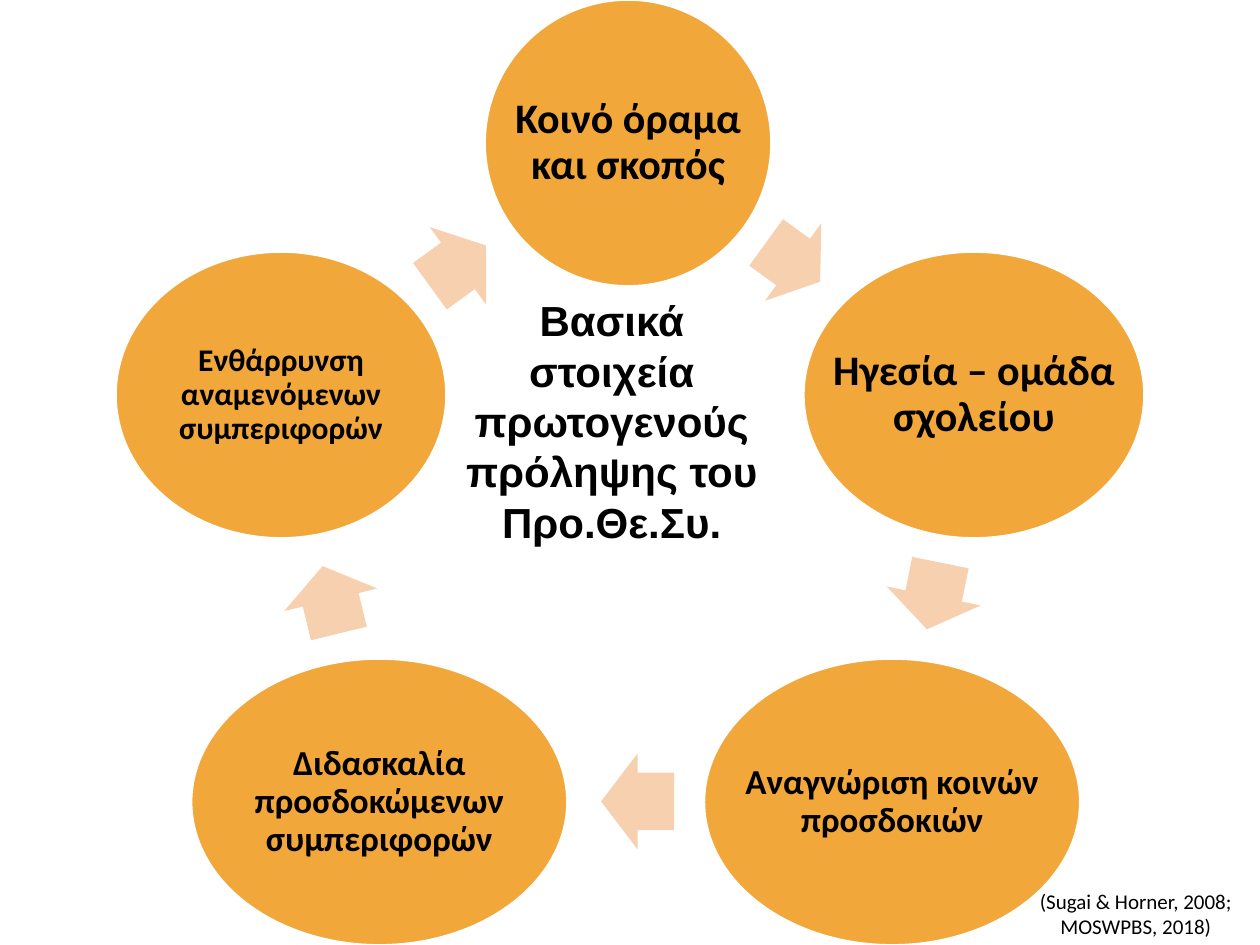
import pptx
import pptx.util
from pptx.dml.color import RGBColor
from pptx.enum.shapes import MSO_SHAPE
from pptx.enum.text import MSO_ANCHOR, PP_ALIGN
from pptx.util import Inches

ORANGE = RGBColor(0xF1, 0xA7, 0x3A)
PEACH = RGBColor(0xF7, 0xD0, 0xAF)
WHITE = RGBColor(0xFF, 0xFF, 0xFF)
BLACK = RGBColor(0, 0, 0)

STEP_HEIGHT = 2.27
ARROW_HEIGHT = 0.76
STEP_INSET = 0.03

# Clockwise from the top: wording, left, top, width, text size
STEPS = [
    ("Κοινό όραμα και σκοπός", 3.85, 0, 2.27, 24),
    ("Ηγεσία – ομάδα σχολείου", 6.38, 2, 2.7, 24),
    ("Αναγνώριση κοινών προσδοκιών", 5.59, 5.23, 2.98, 20),
    ("Διδασκαλία προσδοκώμενων συμπεριφορών", 1.52, 5.23, 2.98, 20),
    ("Ενθάρρυνση αναμενόμενων συμπεριφορών", 0.92, 2, 2.62, 18),
]

# The arrow after each step: left, top, width, rotation
ARROWS = [
    (6.03, 1.7, 0.53, 36),
    (7.14, 4.35, 0.54, 101.4),
    (4.77, 5.98, 0.58, 180),
    (2.35, 4.38, 0.55, 256.4),
    (3.36, 1.73, 0.55, 324),
]


def add_text(slide, wording, left, top, width, height, size, font_name, bold=False):
    label = slide.shapes.add_textbox(
        Inches(left), Inches(top), Inches(width), Inches(height))
    frame = label.text_frame
    frame.word_wrap = True
    frame.text = wording
    paragraph = frame.paragraphs[0]
    paragraph.alignment = PP_ALIGN.CENTER
    font = paragraph.runs[0].font
    font.name = font_name
    font.size = pptx.util.Pt(size)
    font.bold = bold
    font.color.rgb = BLACK
    return frame


def add_filled_shape(slide, preset, left, top, width, height, color):
    shape = slide.shapes.add_shape(
        preset, Inches(left), Inches(top), Inches(width), Inches(height))
    shape.shadow.inherit = False
    shape.fill.solid()
    shape.fill.fore_color.rgb = color
    return shape


def add_step(slide, wording, left, top, width, size):
    """Add an ellipse and a label as wide as it, beyond its own text area."""
    ellipse = add_filled_shape(
        slide, MSO_SHAPE.OVAL, left, top, width, STEP_HEIGHT, ORANGE)
    ellipse.line.color.rgb = WHITE
    ellipse.line.width = pptx.util.Pt(1)

    frame = add_text(slide, wording, left, top, width, STEP_HEIGHT, size, "Calibri", True)
    frame.vertical_anchor = MSO_ANCHOR.MIDDLE
    frame.margin_left = frame.margin_right = Inches(STEP_INSET)
    frame.margin_top = frame.margin_bottom = Inches(STEP_INSET)
    frame.paragraphs[0].line_spacing = 0.9


def add_arrow(slide, left, top, width, rotation):
    arrow = add_filled_shape(
        slide, MSO_SHAPE.RIGHT_ARROW, left, top, width, ARROW_HEIGHT, PEACH)
    arrow.line.fill.background()
    arrow.adjustments[0] = 0.6
    arrow.adjustments[1] = 0.5
    arrow.rotation = rotation


def main():
    presentation = pptx.Presentation()
    presentation.slide_width = Inches(10)
    presentation.slide_height = Inches(7.5)
    slide = presentation.slides.add_slide(presentation.slide_layouts[6])

    add_text(slide, "(Sugai & Horner, 2008; MOSWPBS, 2018)",
             8.03, 7, 1.97, 0.5, 12, "Calibri")
    add_text(slide, "Βασικά στοιχεία πρωτογενούς πρόληψης του Προ.Θε.Συ.",
             3.52, 2.29, 2.67, 2.12, 24, "Arial", True)
    for step, arrow in zip(STEPS, ARROWS):
        add_step(slide, *step)
        add_arrow(slide, *arrow)

    presentation.save("out.pptx")


if __name__ == "__main__":
    main()
